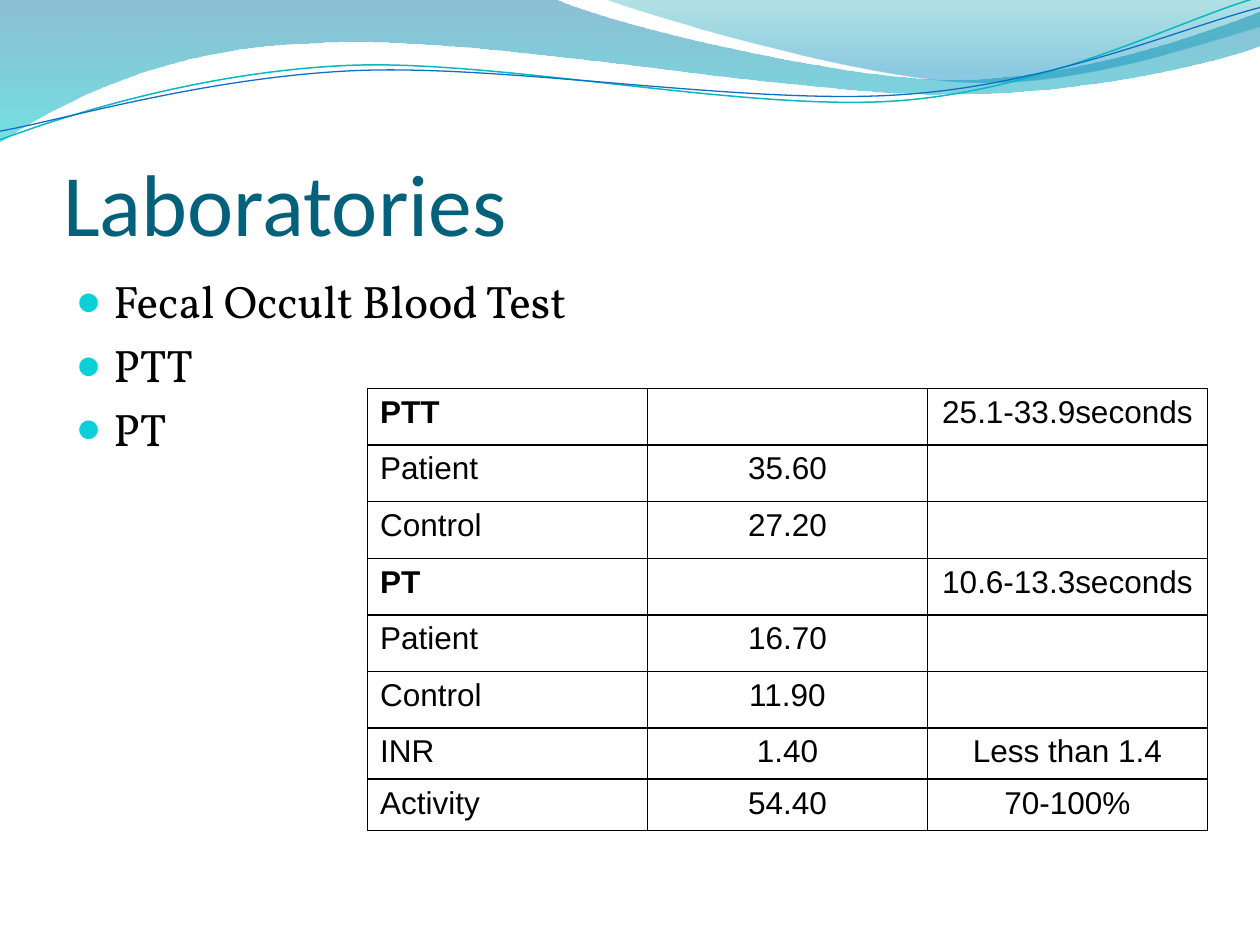
from dataclasses import dataclass
from typing import Optional

from lxml.etree import SubElement
from pptx import Presentation
from pptx.dml.color import RGBColor
from pptx.enum.text import MSO_ANCHOR, MSO_AUTO_SIZE, PP_ALIGN
from pptx.oxml.ns import qn
from pptx.util import Pt

COLORS = {
    "title": "04617B", "text": "000000", "bullet": "0BD0D9", "border": "000000",
    "deep": "0074A1", "cyan": "00C6CF", "teal": "00A1A9", "sky": "008BBF",
    "teal_line": "0AB8BF", "blue_line": "0F6FC6",
}


@dataclass
class Stop:
    position: float
    color: str
    alpha: int


@dataclass
class Wave:
    """Points in points; a segment of one point is a line, of three a Bezier curve."""
    start: tuple
    segments: list
    stops: tuple = ()
    line: Optional[str] = None
    width: float = 0


WAVES = [
    Wave((0, 0), [
        [(316.8, -0.7)],
        [(342.7, 12.2), (478.1, 45.4), (545.8, 45.4)],
        [(614.2, 45.4), (689.8, 18.7), (720, 6.5)],
        [(720.7, 25.9)],
        [(707.8, 31.7), (626.4, 54.7), (537.1, 54)],
        [(447.8, 54), (275, 20.2), (185, 24.5)],
        [(92.9, 25.9), (33.1, 59.8), (-0.7, 81.4)],
        [(0, 0)],
    ], stops=(Stop(0, "deep", 45), Stop(1, "cyan", 55))),
    Wave((344.9, -0.7), [
        [(366.5, 7.9), (491, 44.6), (553.7, 46.8)],
        [(616.3, 49.7), (691.9, 23), (720, 15.1)],
        [(720, 0)],
        [(344.9, -0.7)],
    ], stops=(Stop(0, "teal", 30), Stop(0.8, "sky", 45))),
    Wave((0, 79.9), [
        [(34.6, 67), (113.8, 41), (199.4, 37.4)],
        [(284.4, 33.8), (427, 64.1), (513.4, 57.6)],
        [(599.8, 51.1), (675.4, 10.8), (718.6, -1.4)],
    ], line="teal_line", width=0.85),
    Wave((0, 74.9), [
        [(33.8, 69.1), (118.1, 43.9), (203.8, 40.3)],
        [(290.2, 36.7), (429.8, 60.5), (516.2, 54)],
        [(601.9, 48.2), (677.5, 15.1), (720, 4.3)],
    ], line="blue_line", width=0.75),
]

BULLETS = ["Fecal Occult Blood Test", "PTT", "PT"]
RESULTS = [
    ("PTT", "", "25.1-33.9seconds"),
    ("Patient", "35.60", ""),
    ("Control", "27.20", ""),
    ("PT", "", "10.6-13.3seconds"),
    ("Patient", "16.70", ""),
    ("Control", "11.90", ""),
    ("INR", "1.40", "Less than 1.4"),
    ("Activity", "54.40", "70-100%"),
]
HEADINGS = ("PTT", "PT")


def rgb(name: str) -> RGBColor:
    return RGBColor.from_string(COLORS[name])


def style_run(r, name: str, size: float, color: str, bold: bool = False) -> None:
    for attr, value in {"name": name, "size": Pt(size), "bold": bold}.items():
        setattr(r.font, attr, value)
    r.font.color.rgb = rgb(color)


def place(sp, left: float, top: float, width: float, height: float) -> None:
    box = {"left": left, "top": top, "width": width, "height": height}
    for attr, value in box.items():
        setattr(sp, attr, Pt(value))


def curve_segments(sp, segments: list) -> None:
    """Join the three line steps of each curved segment into one Bezier step."""
    steps = iter(list(sp.element.iter(qn("a:lnTo"))))
    for segment in segments:
        first, *others = [next(steps) for _ in segment]
        if others:
            first.tag = qn("a:cubicBezTo")
        for step in others:
            first.append(step[0])
            step.getparent().remove(step)


def draw_wave(s, wave: Wave) -> None:
    points = [wave.start] + [point for segment in wave.segments for point in segment]
    first, *rest = [(Pt(x), Pt(y)) for x, y in points]
    builder = s.shapes.build_freeform(*first)
    builder.add_line_segments(rest, close=bool(wave.stops))
    sp = builder.convert_to_shape()
    curve_segments(sp, wave.segments)
    sp.shadow.inherit = False
    if wave.line:
        sp.fill.background()
        sp.line.color.rgb = rgb(wave.line)
        sp.line.width = Pt(wave.width)
        return
    sp.line.fill.background()
    sp.fill.gradient()
    sp.fill.gradient_angle = 270
    for target, stop in zip(sp.fill.gradient_stops, wave.stops):
        target.position = stop.position
        target.color.rgb = rgb(stop.color)
    for clr, stop in zip(sp.element.iter(qn("a:srgbClr")), wave.stops):
        SubElement(clr, qn("a:alpha"), val=str(stop.alpha * 1000))


def add_bullet(p) -> None:
    pPr = p._p.get_or_add_pPr()
    pPr.set("marL", str(Pt(21.6)))
    pPr.set("indent", str(-Pt(21.6)))
    clr = SubElement(pPr, qn("a:buClr"))
    SubElement(clr, qn("a:srgbClr"), val=COLORS["bullet"])
    SubElement(pPr, qn("a:buSzPct"), val="95000")
    SubElement(pPr, qn("a:buChar"), char="●")


def fill_title(sp) -> None:
    place(sp, 36, 55.4, 648, 90)
    tf = sp.text_frame
    formats = {"margin_left": 0, "margin_right": 0, "margin_top": Pt(3.6), "margin_bottom": 0,
               "vertical_anchor": MSO_ANCHOR.BOTTOM, "auto_size": MSO_AUTO_SIZE.NONE}
    for attr, value in formats.items():
        setattr(tf, attr, value)
    p = tf.paragraphs[0]
    p.alignment = PP_ALIGN.LEFT
    r = p.add_run()
    r.text = "Laboratories"
    style_run(r, "Calibri", 50, "title")


def fill_body(sp) -> None:
    place(sp, 36, 152.6, 648, 345.6)
    tf = sp.text_frame
    tf.auto_size = MSO_AUTO_SIZE.NONE
    tf.text = "\n".join(BULLETS)
    for p in tf.paragraphs:
        add_bullet(p)
        style_run(p.runs[0], "Vollkorn", 26, "text")


def add_borders(cell) -> None:
    tcPr = cell._tc.get_or_add_tcPr()
    for side in ("lnL", "lnR", "lnT", "lnB"):
        ln = SubElement(tcPr, qn(f"a:{side}"), w=str(Pt(1)))
        fill = SubElement(ln, qn("a:solidFill"))
        SubElement(fill, qn("a:srgbClr"), val=COLORS["border"])


def draw_results(s) -> None:
    frame = s.shapes.add_table(len(RESULTS), 3, Pt(210), Pt(222), Pt(480), Pt(233.6))
    table = frame.table
    table.first_row = table.horz_banding = False
    for row, values in zip(table.rows, RESULTS):
        row.height = Pt(29.2 if all(values) else 32.35)
        for col, (cell, value) in enumerate(zip(row.cells, values)):
            add_borders(cell)
            cell.fill.background()
            p = cell.text_frame.paragraphs[0]
            p.alignment = PP_ALIGN.CENTER if col else PP_ALIGN.LEFT
            if value:
                r = p.add_run()
                r.text = value
                style_run(r, "Arial", 18, "text", value in HEADINGS)


def main() -> None:
    prs = Presentation()
    prs.slide_width, prs.slide_height = Pt(720), Pt(540)
    s = prs.slides.add_slide(prs.slide_layouts[1])
    title, body = s.placeholders
    for wave in WAVES:
        draw_wave(s, wave)
    for sp in (title, body):  # bring the text in front of the waves
        sp.element.getparent().append(sp.element)
    fill_title(title)
    fill_body(body)
    draw_results(s)
    prs.save("out.pptx")


if __name__ == "__main__":
    main()
